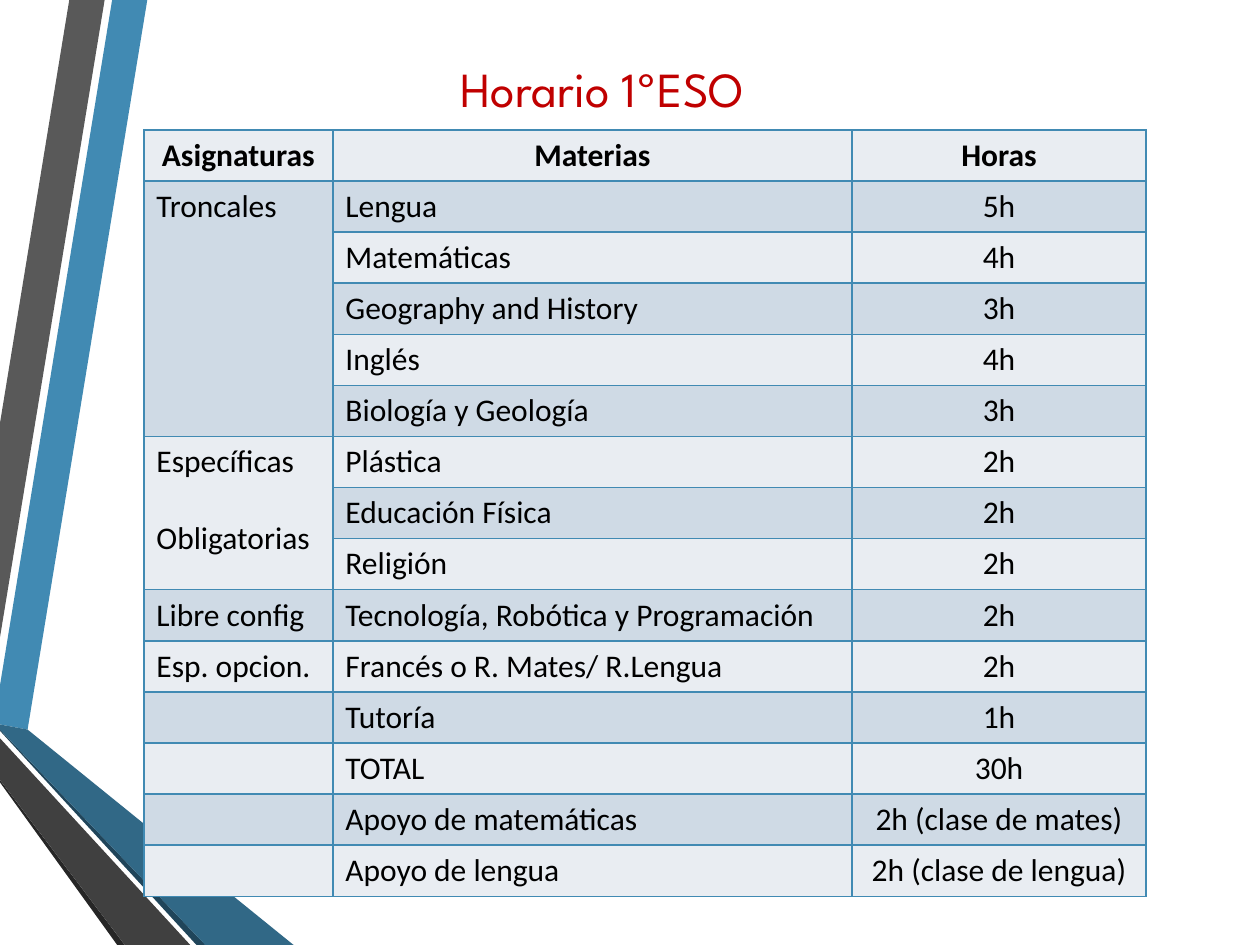
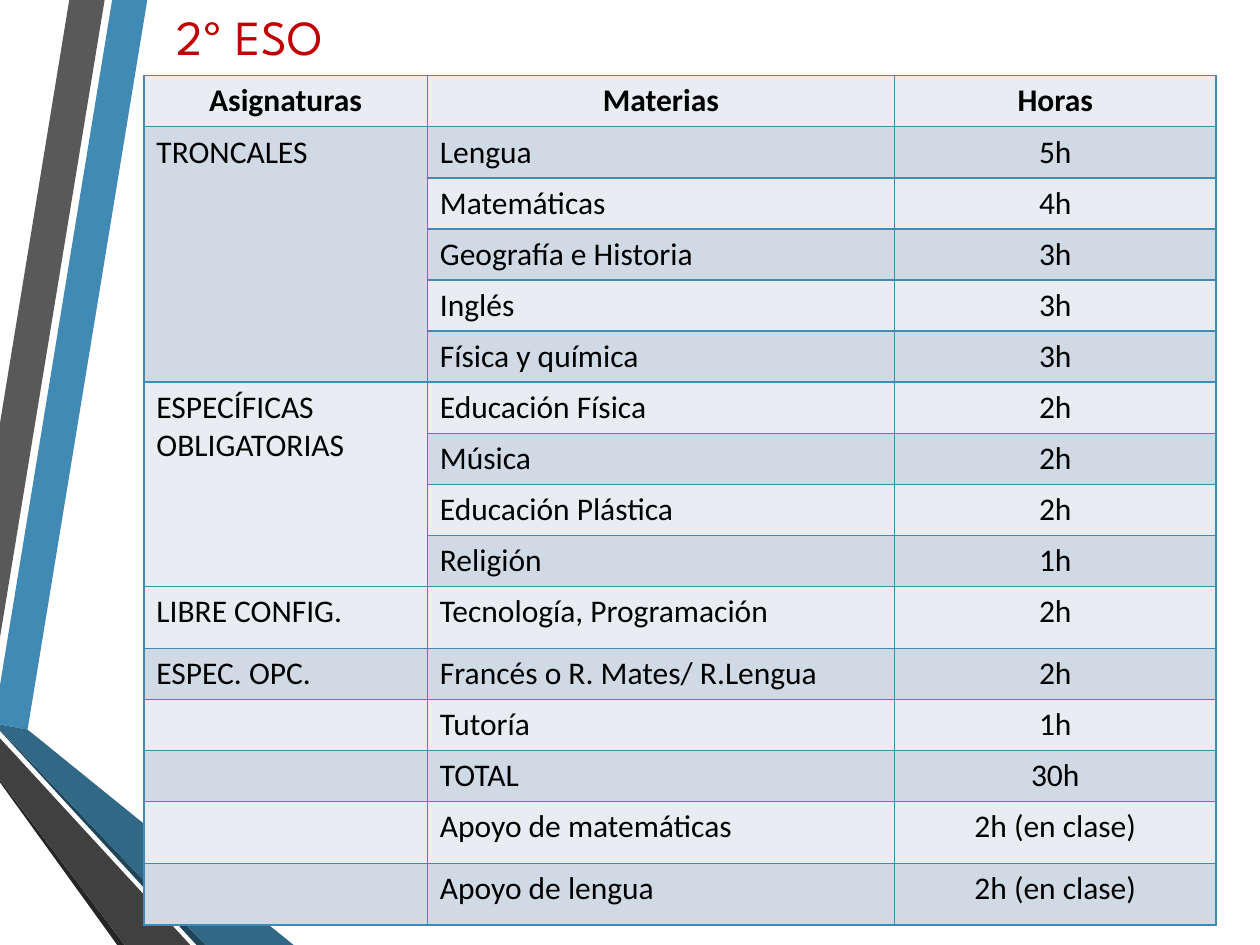
from dataclasses import dataclass

from lxml.etree import SubElement
from pptx import Presentation
from pptx.dml.color import RGBColor as RGB
from pptx.enum.text import MSO_ANCHOR as Anchor, MSO_AUTO_SIZE as Fit, PP_ALIGN as Align
from pptx.oxml.ns import qn
from pptx.util import Pt


@dataclass(frozen=True)
class Theme:
    title: str = "C00000"
    ink: str = "000000"
    line: str = "418AB3"
    rows: tuple = ("E9EDF2", "CFDAE5")
    head_font: str = "League Spartan"
    body_font: str = "Calibri"
    head_size: int = 28
    body_size: int = 18
    row: float = 29.2
    tall: float = 35.3


# Side ribbons: fill and corners in points, from back to front
BANDS = [
    ("418AB3", [(0, 391.7), (0, 414), (15.8, 416.9), (84.2, 0), (64.1, 0)]),
    ("595959", [(59.8, 0), (39.6, 0), (0, 241.9), (0, 364.3)]),
    ("262626", [(0, 445.7), (0, 447.1), (67, 540), (71.3, 540)]),
    ("20455A", [(0, 416.9), (0, 417.6), (112.3, 540), (117.4, 540)]),
    ("316886", [(0, 416.9), (117.4, 540), (167.8, 540), (15.8, 416.9), (0, 414)]),
    ("404040", [(0, 445.7), (71.3, 540), (108.7, 540), (0, 421.9)]),
]

HEADS = ("Asignaturas", "Materias", "Horas")

# Each group: subject lines, then its rows of materia and hours
FIRST = [
    (["Troncales"], [("Lengua", "5h"), ("Matemáticas", "4h"),
                     ("Geography and History", "3h"), ("Inglés", "4h"),
                     ("Biología y Geología", "3h")]),
    (["Específicas", "Obligatorias"], [("Plástica", "2h"), ("Educación Física", "2h"),
                                       ("Religión", "2h")]),
    (["Libre config"], [("Tecnología, Robótica y Programación", "2h")]),
    (["Esp. opcion."], [("Francés o R. Mates/ R.Lengua", "2h")]),
    ([], [("Tutoría", "1h")]),
    ([], [("TOTAL", "30h")]),
    ([], [("Apoyo de matemáticas", "2h (clase de mates)")]),
    ([], [("Apoyo de lengua", "2h (clase de lengua)")]),
]
SECOND = [
    (["TRONCALES"], [("Lengua", "5h"), ("Matemáticas", "4h"),
                     ("Geografía e Historia", "3h"), ("Inglés", "3h"),
                     ("Física y química", "3h")]),
    (["ESPECÍFICAS", "OBLIGATORIAS"], [("Educación Física", "2h"), ("Música", "2h"),
                                       ("Educación Plástica", "2h"), ("Religión", "1h")]),
    (["LIBRE CONFIG."], [("Tecnología, Programación", "2h")]),
    (["ESPEC. OPC."], [("Francés o R. Mates/ R.Lengua", "2h")]),
    ([], [("Tutoría", "1h")]),
    ([], [("TOTAL", "30h")]),
    ([], [("Apoyo de matemáticas", "2h (en clase)")]),
    ([], [("Apoyo de lengua", "2h (en clase)")]),
]


def write(frame, text, *, font, size, color, bold=False, align=Align.LEFT, gap=0):
    """Fill a text frame, one paragraph a line, with gap points between them."""
    for i, line in enumerate(text.split("\n")):
        para = frame.add_paragraph() if i else frame.paragraphs[0]
        para.alignment = align
        if i:
            para.space_before = Pt(gap)
        run = para.add_run()
        run.text = line
        run.font.name, run.font.size, run.font.bold = font, Pt(size), bold
        run.font.color.rgb = RGB.from_string(color)


def edge(cell, color):
    """Draw a one point border on all four sides of a cell."""
    props = cell._tc.get_or_add_tcPr()
    for side in ("lnL", "lnR", "lnT", "lnB"):
        line = SubElement(props, qn(f"a:{side}"), w=str(Pt(1)))
        SubElement(SubElement(line, qn("a:solidFill")), qn("a:srgbClr"), val=color)


class Deck:
    def __init__(self, theme):
        self.theme = theme
        self.prs = Presentation()
        self.prs.slide_width, self.prs.slide_height = Pt(720), Pt(540)
        self.layout = self.prs.slide_layouts[5]
        self.slide = None

    def page(self):
        self.slide = self.prs.slides.add_slide(self.layout)

    def bands(self):
        """Draw the ribbons and move them to the layout, for all slides."""
        for i, (color, dots) in enumerate(BANDS):
            start, *rest = [(Pt(x), Pt(y)) for x, y in dots]
            pen = self.slide.shapes.build_freeform(*start)
            pen.add_line_segments(rest, close=True)
            band = pen.convert_to_shape()
            band.shadow.inherit = False
            band.fill.solid()
            band.fill.fore_color.rgb = RGB.from_string(color)
            band.line.fill.background()
            band.element.nvSpPr.cNvPr.set("id", str(20 + i))
            self.layout.shapes.element.insert(2 + i, band.element)

    def title(self, text, box, align, anchor):
        head = self.slide.shapes.title
        head.left, head.top, head.width, head.height = map(Pt, box)
        frame = head.text_frame
        frame.auto_size, frame.vertical_anchor = Fit.NONE, anchor
        frame.word_wrap = True
        look = self.theme
        write(frame, text, font=look.head_font, size=look.head_size,
              color=look.title, align=align)

    def cell(self, grid, row, col, text, gap=0):
        look, cell = self.theme, grid.cell(row, col)
        edge(cell, look.line)
        cell.fill.solid()
        cell.fill.fore_color.rgb = RGB.from_string(look.rows[row % 2])
        if text:
            mid = row == 0 or col == 2
            write(cell.text_frame, text, font=look.body_font, size=look.body_size,
                  color=look.ink, bold=row == 0, gap=gap,
                  align=Align.CENTER if mid else Align.LEFT)

    def table(self, groups, top, widths, tall=(), gap=0):
        look = self.theme
        count = 1 + sum(len(items) for _, items in groups)
        sizes = [look.tall if i in tall else look.row for i in range(count)]
        grid = self.slide.shapes.add_table(
            count, len(widths), Pt(82.2), Pt(top), Pt(sum(widths)), Pt(sum(sizes))).table
        grid.first_row = grid.horz_banding = False
        for col, width in zip(grid.columns, widths):
            col.width = Pt(width)
        for row, size in zip(grid.rows, sizes):
            row.height = Pt(size)
        for col, text in enumerate(HEADS):
            self.cell(grid, 0, col, text)
        row = 1
        for names, items in groups:
            first = row
            for i, (name, hours) in enumerate(items):
                self.cell(grid, row, 0, "" if i else "\n".join(names), gap)
                self.cell(grid, row, 1, name)
                self.cell(grid, row, 2, hours)
                row += 1
            if len(items) > 1:
                grid.cell(first, 0).merge(grid.cell(row - 1, 0))


def main():
    deck = Deck(Theme())
    deck.page()
    deck.bands()
    deck.title("Horario 1ºESO", (20.2, 25.9, 648, 48.2), Align.CENTER, Anchor.MIDDLE)
    deck.table(FIRST, 74.2, (108, 296.6, 168.2), gap=22)

    deck.page()
    deck.title("2º ESO", (93.6, 0, 116, 41), Align.LEFT, Anchor.TOP)
    deck.table(SECOND, 43.2, (162, 267, 183.6), tall=(10, 14, 15))
    deck.prs.save("out.pptx")


if __name__ == "__main__":
    main()
